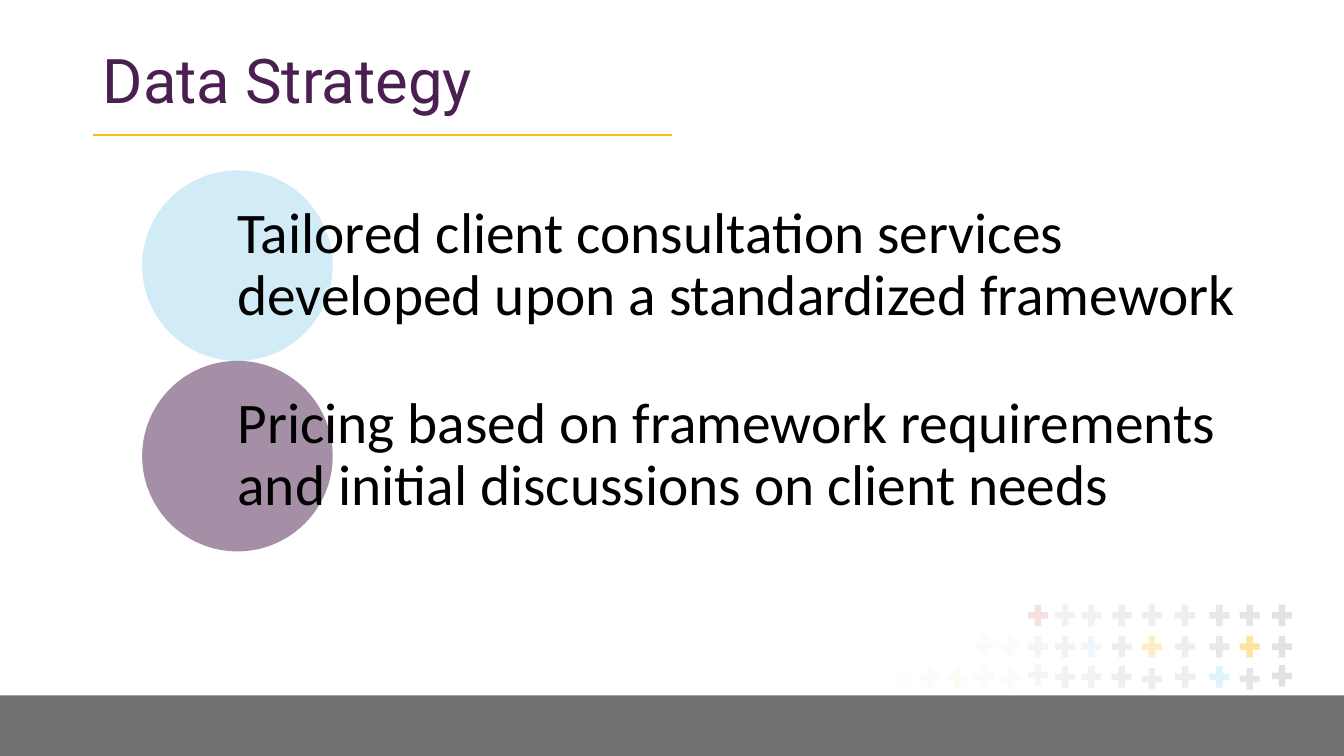
from pptx import Presentation
from pptx.dml.color import RGBColor
from pptx.enum.shapes import MSO_CONNECTOR as Link, MSO_SHAPE as Shape
from pptx.enum.text import MSO_ANCHOR as Anchor
from pptx.oxml.ns import qn
from pptx.util import Inches, Pt
from lxml.etree import SubElement

WIDE, HIGH = 13.33, 7.5
GREY, GOLD, BLUE, RED, PLUM = "BFBFBF", "F9BE10", "A7DAF1", "BD3B31", "4A2051"

POINTS = [
    ("Tailored client consultation services developed upon a standardized framework", BLUE),
    ("Pricing based on framework requirements and initial discussions on client needs", PLUM),
]

# Plus pattern: column offsets, opacity per column, first column of each row
COLS = [0, 0.26, 0.53, 0.8, 1.05, 1.33, 1.6, 1.86, 2.16, 2.46, 2.79, 3.13, 3.43, 3.75]
FADE = [2, 5, 5, 5, 5, 15, 20, 20, 25, 25, 25, 35, 40, 45]
STARTS = [5, 3, 0]
DRIFT = [0, 0, 0, 0, 0.01, -0.03, -0.01, -0.01, -0.01, 0.01, -0.01, -0.01, 0.01, -0.02]
ACCENTS = {(0, 5): RED, (1, 7): BLUE, (1, 9): GOLD, (1, 12): GOLD,
           (2, 2): GOLD, (2, 11): BLUE}


def color(code):
    return RGBColor.from_string(code)


def add_form(slide, kind, box, fill, alpha=100):
    form = slide.shapes.add_shape(kind, *map(Inches, box))
    form.shadow.inherit = False
    form.line.fill.background()
    form.fill.solid()
    form.fill.fore_color.rgb = color(fill)
    if alpha < 100:
        tone = form._element.spPr.find(qn("a:solidFill"))[0]
        SubElement(tone, qn("a:alpha")).set("val", str(alpha * 1000))


def add_text(slide, box, text, size, font, tint, side, edge):
    frame = slide.shapes.add_textbox(*map(Inches, box)).text_frame
    frame.word_wrap = True
    frame.vertical_anchor = Anchor.MIDDLE
    frame.margin_left = frame.margin_right = Inches(side)
    frame.margin_top = frame.margin_bottom = Inches(edge)
    para = frame.paragraphs[0]
    para.text = text
    para.line_spacing = 0.9
    para.font.size, para.font.name = Pt(size), font
    para.font.color.rgb = color(tint)


def add_title(slide, box, text):
    left, top, width, height = box
    add_text(slide, box, text, 44, "Roboto", PLUM, 0.1, 0.05)
    # Gold rule spans half the title box
    low = Inches(top + height + 0.09)
    rule = slide.shapes.add_connector(
        Link.STRAIGHT, Inches(left), low, Inches(left + width / 2), low)
    rule.line.color.rgb = color(GOLD)
    rule.line.width = Pt(1)
    SubElement(rule._element.spPr, qn("a:effectLst"))


def add_points(slide, box, points):
    left, top, width, height = box
    size = height / len(points)
    for row, (text, fill) in enumerate(points):
        y = top + row * size
        add_form(slide, Shape.OVAL, (left, y, size, size), fill, 50)
        # Text starts at the centre of its circle
        add_text(slide, (left + size / 2, y, width - size / 2, size),
                 text, 41, "Calibri", "000000", 0, 0.06)


def add_pluses(slide, box):
    left, top, width, height = box
    wide, high = 0.27, 0.29
    step = (height - high) / (len(STARTS) - 1)
    scale = (width - wide) / COLS[-1]
    for row, start in enumerate(STARTS):
        for col in range(start, len(COLS)):
            y = top + row * step + (DRIFT[col] if row == 2 else 0)
            add_form(slide, Shape.MATH_PLUS, (left + COLS[col] * scale, y, wide, high),
                     ACCENTS.get((row, col), GREY), FADE[col])


def add_footer(slide, box):
    add_form(slide, Shape.RECTANGLE, box, "707372")


def main():
    deck = Presentation()
    deck.slide_width, deck.slide_height = Inches(WIDE), Inches(HIGH)
    slide = deck.slides.add_slide(deck.slide_layouts[6])
    add_footer(slide, (0, HIGH * 0.92, WIDE, HIGH * 0.08))
    add_pluses(slide, (8.83, 5.96, 4.02, 0.91))
    add_title(slide, (0.92, 0.4, 11.5, 0.85), "Data Strategy")
    add_points(slide, (1.41, 1.69, 11, 3.78), POINTS)
    deck.save("out.pptx")


if __name__ == "__main__":
    main()
